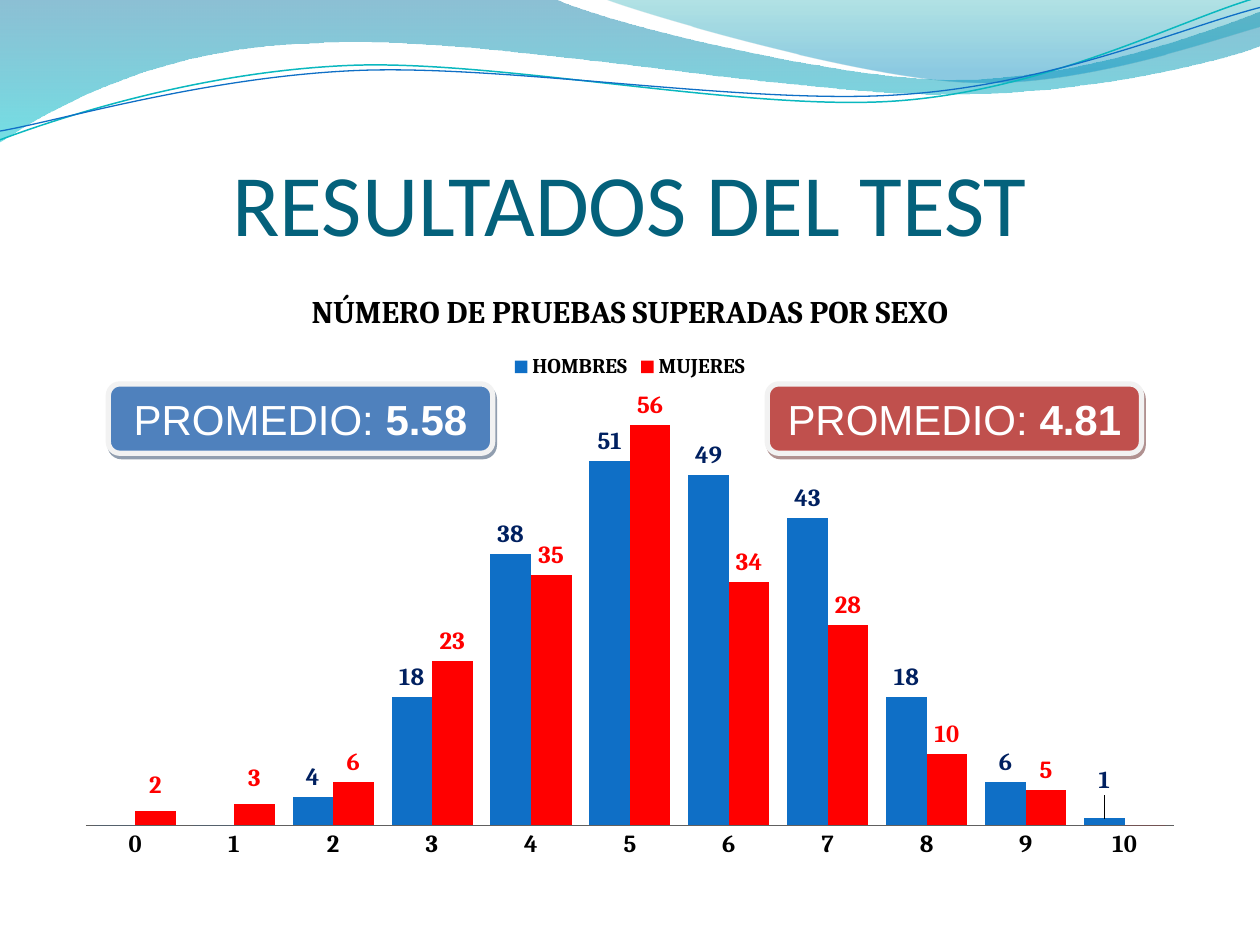
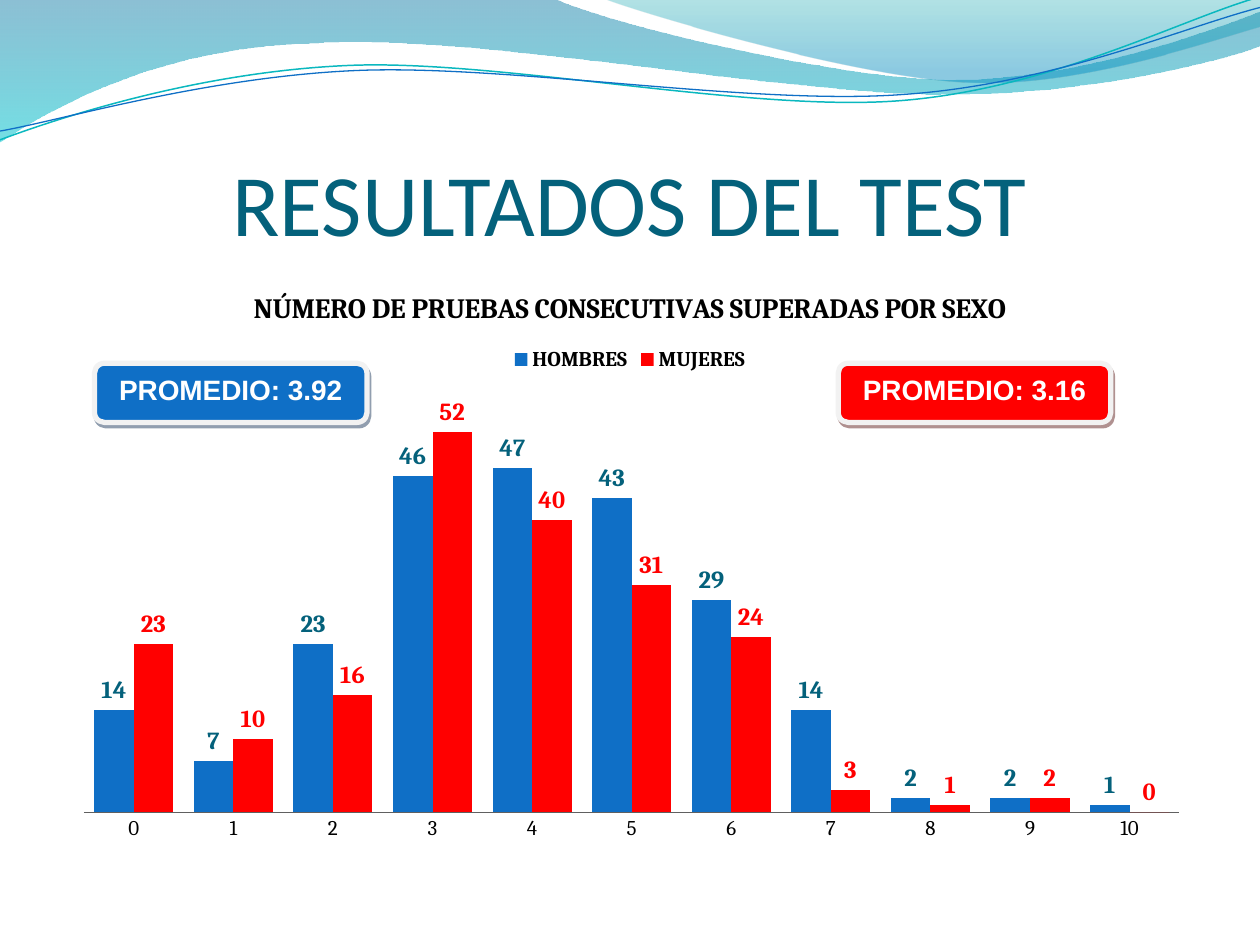
"""Build two slides that chart the test results of men and women."""
import math

import pptx
import pptx.chart.data
import pptx.dml.color
import pptx.enum.chart
import pptx.enum.shapes
import pptx.enum.text
import pptx.oxml
import pptx.oxml.ns
import pptx.util

Pt = pptx.util.Pt
qn = pptx.oxml.ns.qn
nsdecls = pptx.oxml.ns.nsdecls

COLORS = {
    "title": "04617B", "black": "000000", "white": "FFFFFF", "axis": "606060",
    "men": "0F6FC6", "women": "FF0000", "navy": "002060",
    "soft_blue": "4F81BD", "soft_red": "C0504D", "badge_edge": "F2F2F2",
    "blue_shadow": "243F60", "red_shadow": "622423",
    "band_top": "0074A1", "band_bottom": "00C6CF",
    "crest_top": "00A1A9", "crest_bottom": "008BBF", "teal_line": "0AB8BF",
}
BAND = [(0, 0), (316.8, -0.7), (342.7, 12.2, 478.1, 45.4, 545.8, 45.4),
        (614.2, 45.4, 689.8, 18.7, 720, 6.5), (720.7, 25.9),
        (707.8, 31.7, 626.4, 54.7, 537.1, 54), (447.8, 54, 275, 20.2, 185, 24.5),
        (92.9, 25.9, 33.1, 59.8, -0.7, 81.4)]
CREST = [(344.9, -0.7), (366.5, 7.9, 491, 44.6, 553.7, 46.8),
         (616.3, 49.7, 691.9, 23, 720, 15.1), (720, 0)]
TEAL_WAVE = [(0, 79.9), (34.6, 67, 113.8, 41, 199.4, 37.4),
             (284.4, 33.8, 427, 64.1, 513.4, 57.6),
             (599.8, 51.1, 675.4, 10.8, 718.6, -1.4)]
BLUE_WAVE = [(0, 74.9), (33.8, 69.1, 118.1, 43.9, 203.8, 40.3),
             (290.2, 36.7, 429.8, 60.5, 516.2, 54),
             (601.9, 48.2, 677.5, 15.1, 720, 4.3)]
WAVE_TILT = 2.7
CHART_BOX = (36, 152.3, 648, 345.6)


def rgb(name):
    """Return the named colour."""
    return pptx.dml.color.RGBColor.from_string(COLORS[name])


def style_font(font, size, color, face="Cambria", bold=False):
    """Set size, colour, typeface and weight of a font."""
    font.size, font.name, font.bold = Pt(size), face, bold
    font.color.rgb = rgb(color)


def turn(outline, center, degrees):
    """Rotate an outline clockwise about a center."""
    cos, sin = math.cos(math.radians(degrees)), math.sin(math.radians(degrees))
    turned = []
    for part in outline:
        offsets = [(x - center[0], y - center[1]) for x, y in zip(part[::2], part[1::2])]
        turned.append(tuple(value for dx, dy in offsets for value in (
            center[0] + dx * cos - dy * sin, center[1] + dx * sin + dy * cos)))
    return turned


def add_outline(page, outline, close):
    """Draw a freeform of straight lines and cubic curves without shadow."""
    points = [(Pt(x), Pt(y)) for part in outline for x, y in zip(part[::2], part[1::2])]
    builder = page.shapes.build_freeform(*points[0], scale=1.0)
    builder.add_line_segments(points[1:], close=close)
    shape = builder.convert_to_shape()
    shape.shadow.inherit = False
    segments = iter(list(shape._element.iter(qn("a:lnTo"))))
    for part in outline[1:]:
        segment = next(segments)
        if len(part) == 6:
            curve = segment.makeelement(qn("a:cubicBezTo"), {})
            segment.addprevious(curve)
            for knot in (segment, next(segments), next(segments)):
                curve.append(knot[0])
                knot.getparent().remove(knot)
    return shape


def add_band(page, outline, stops):
    """Draw a band with a vertical, see-through gradient."""
    band = add_outline(page, outline, True)
    band.line.fill.background()
    band.fill.gradient()
    band.fill.gradient_angle = 270
    for stop, (position, color, opacity) in zip(band.fill.gradient_stops, stops):
        stop.position = position
        stop.color.rgb = rgb(color)
        tint = stop._gs.find(qn("a:srgbClr"))
        tint.append(tint.makeelement(qn("a:alpha"), {"val": str(opacity * 1000)}))


def add_wave(page, outline, center, color, width):
    """Draw an open wavy line, tilted about its center."""
    wave = add_outline(page, turn(outline, center, WAVE_TILT), False)
    wave.rotation = -WAVE_TILT
    wave.fill.background()
    wave.line.color.rgb = rgb(color)
    wave.line.width = Pt(width)


def add_header(page):
    """Draw the waves and the title that every page shares."""
    add_band(page, BAND, [(0, "band_top", 45), (1, "band_bottom", 55)])
    add_band(page, CREST, [(0, "crest_top", 30), (0.8, "crest_bottom", 45)])
    add_wave(page, TEAL_WAVE, (359.3, 41.4), "teal_line", 0.85)
    add_wave(page, BLUE_WAVE, (359.6, 42.5), "men", 0.75)
    box = page.shapes.add_textbox(Pt(36), Pt(55), Pt(648), Pt(90))
    frame = box.text_frame
    frame.word_wrap = True
    frame.vertical_anchor = pptx.enum.text.MSO_ANCHOR.BOTTOM
    frame.margin_left = frame.margin_right = frame.margin_bottom = 0
    frame.text = "RESULTADOS DEL TEST"
    para = frame.paragraphs[0]
    para.alignment = pptx.enum.text.PP_ALIGN.CENTER
    style_font(para.runs[0].font, 50, "title", "Calibri")


def label_series(series, color, adjustments):
    """Label the columns without leader lines; hide (None) or shift single labels."""
    labels = series.data_labels
    labels.show_value = True
    labels.position = pptx.enum.chart.XL_LABEL_POSITION.OUTSIDE_END
    style_font(labels.font, 14, color, bold=True)
    for index, shift in adjustments.items():
        label = series.points[index].data_label
        style_font(label.font, 14, color, bold=True)
        element = label._get_or_add_dLbl()
        if shift is None:
            for child in list(element)[1:]:
                element.remove(child)
            element.append(element.makeelement(qn("c:delete"), {"val": "1"}))
        else:
            element.insert(1, manual_layout({"x": 0, "y": shift}))
    labels._element.append(pptx.oxml.parse_xml(
        f'<c:extLst {nsdecls("c")}><c:ext uri="{{CE6537A1-D6FC-4f65-9D91-7224C49458BB}}" '
        'xmlns:c15="http://schemas.microsoft.com/office/drawing/2012/chart">'
        '<c15:showLeaderLines val="0"/></c:ext></c:extLst>'))


def manual_layout(values):
    """Return a chart layout element with the given settings."""
    fields = "".join(f'<c:{key} val="{value}"/>' for key, value in values.items())
    return pptx.oxml.parse_xml(
        f'<c:layout {nsdecls("c")}><c:manualLayout>{fields}</c:manualLayout></c:layout>')


def place_plot(chart, left, top, width, height):
    """Fix the inner plot area, in points from the corner of the chart."""
    area = chart._chartSpace.chart.plotArea
    for old in area.findall(qn("c:layout")):
        area.remove(old)
    chart_width, chart_height = CHART_BOX[2:]
    area.insert(0, manual_layout({
        "layoutTarget": "inner", "xMode": "edge", "yMode": "edge",
        "x": left / chart_width, "y": top / chart_height,
        "w": width / chart_width, "h": height / chart_height}))


def add_results_chart(page, title, title_size, men, women, men_label, gap, plot_box,
                      axis_size, axis_bold, men_shifts, women_shifts):
    """Add the column chart of men and women by number of tests passed."""
    data = pptx.chart.data.CategoryChartData()
    data.categories = [str(count) for count in range(11)]
    data.add_series("HOMBRES", men)
    data.add_series("MUJERES", women)
    chart = page.shapes.add_chart(
        pptx.enum.chart.XL_CHART_TYPE.COLUMN_CLUSTERED, *map(Pt, CHART_BOX), data).chart
    style_font(chart.font, 10, "black")
    chart.has_title = True
    heading = chart.chart_title
    heading.include_in_layout = False
    heading.text_frame.text = title
    style_font(heading.text_frame.paragraphs[0].runs[0].font, title_size, "black", bold=True)
    chart.has_legend = True
    chart.legend.position = pptx.enum.chart.XL_LEGEND_POSITION.TOP
    chart.legend.include_in_layout = False
    style_font(chart.legend.font, 12, "black", bold=True)

    values = chart.value_axis
    values.visible = values.has_major_gridlines = False
    values.minimum_scale, values.maximum_scale = 0, 60
    counts = chart.category_axis
    counts.major_tick_mark = pptx.enum.chart.XL_TICK_MARK.NONE
    counts.format.line.color.rgb = rgb("axis")
    counts.format.line.width = Pt(0.5)
    style_font(counts.tick_labels.font, axis_size, "black", bold=axis_bold)

    plot = chart.plots[0]
    plot.vary_by_categories = False
    plot.gap_width, plot.overlap = gap, 0
    for series, fill, label, shifts in zip(
            plot.series, ("men", "women"), (men_label, "women"), (men_shifts, women_shifts)):
        series.format.fill.solid()
        series.format.fill.fore_color.rgb = rgb(fill)
        label_series(series, label, shifts)
    place_plot(chart, *plot_box)


def add_average(page, left, top, width, height, pieces, size, fill, shadow):
    """Add a rounded badge with an average; the last piece of text is bold."""
    badge = page.shapes.add_shape(
        pptx.enum.shapes.MSO_SHAPE.ROUNDED_RECTANGLE, Pt(left), Pt(top), Pt(width), Pt(height))
    badge.fill.solid()
    badge.fill.fore_color.rgb = rgb(fill)
    badge.line.color.rgb = rgb("badge_edge")
    badge.line.width = Pt(3)
    badge.shadow.inherit = False
    effects = badge._element.spPr.find(qn("a:effectLst"))
    effects.append(pptx.oxml.parse_xml(
        f'<a:outerShdw {nsdecls("a")} blurRad="0" dist="{Pt(2.2)}" '
        f'dir="3780000" algn="ctr" rotWithShape="0"><a:srgbClr val="{COLORS[shadow]}">'
        '<a:alpha val="50000"/></a:srgbClr></a:outerShdw>'))
    frame = badge.text_frame
    frame.word_wrap = True
    frame.vertical_anchor = pptx.enum.text.MSO_ANCHOR.TOP
    para = frame.paragraphs[0]
    para.alignment = pptx.enum.text.PP_ALIGN.CENTER
    para.space_after = Pt(10)
    for piece in pieces:
        span = para.add_run()
        span.text = piece
        style_font(span.font, size, "white", "Arial", piece is pieces[-1])


def add_page(deck):
    """Add a blank page with the shared header."""
    page = deck.slides.add_slide(deck.slide_layouts[6])
    add_header(page)
    return page


def main():
    """Build and save the deck."""
    deck = pptx.Presentation()
    deck.slide_width, deck.slide_height = Pt(720), Pt(540)

    page = add_page(deck)
    add_results_chart(
        page, "NÚMERO DE PRUEBAS SUPERADAS POR SEXO", 18,
        men=[0, 0, 4, 18, 38, 51, 49, 43, 18, 6, 1],
        women=[2, 3, 6, 23, 35, 56, 34, 28, 10, 5, 0],
        men_label="navy", gap=44, plot_box=(13, 74.4, 622, 245),
        axis_size=14, axis_bold=True,
        men_shifts={0: None, 1: None, 10: -0.03},
        women_shifts={0: -0.01, 1: -0.01, 10: None})
    add_average(page, 61.9, 219.4, 219.6, 39.6, ["PROMEDIO: ", "5.58"], 24,
                "soft_blue", "blue_shadow")
    add_average(page, 438.5, 219.4, 213.8, 39.6, ["PROMEDIO: ", "4.81"], 24,
                "soft_red", "red_shadow")

    page = add_page(deck)
    add_results_chart(
        page, "NÚMERO DE PRUEBAS CONSECUTIVAS SUPERADAS POR SEXO", 16,
        men=[14, 7, 23, 46, 47, 43, 29, 14, 2, 2, 1],
        women=[23, 10, 16, 52, 40, 31, 24, 3, 1, 2, 0],
        men_label="title", gap=52, plot_box=(12, 61, 626, 250.9),
        axis_size=12, axis_bold=False, men_shifts={}, women_shifts={})
    add_average(page, 54, 207.6, 155.7, 33.8, ["PROMEDIO: 3.92"], 16, "men", "blue_shadow")
    add_average(page, 479, 207.6, 155.7, 33.8, ["PROMEDIO: 3.16"], 16, "women", "red_shadow")

    deck.save("out.pptx")


if __name__ == "__main__":
    main()
